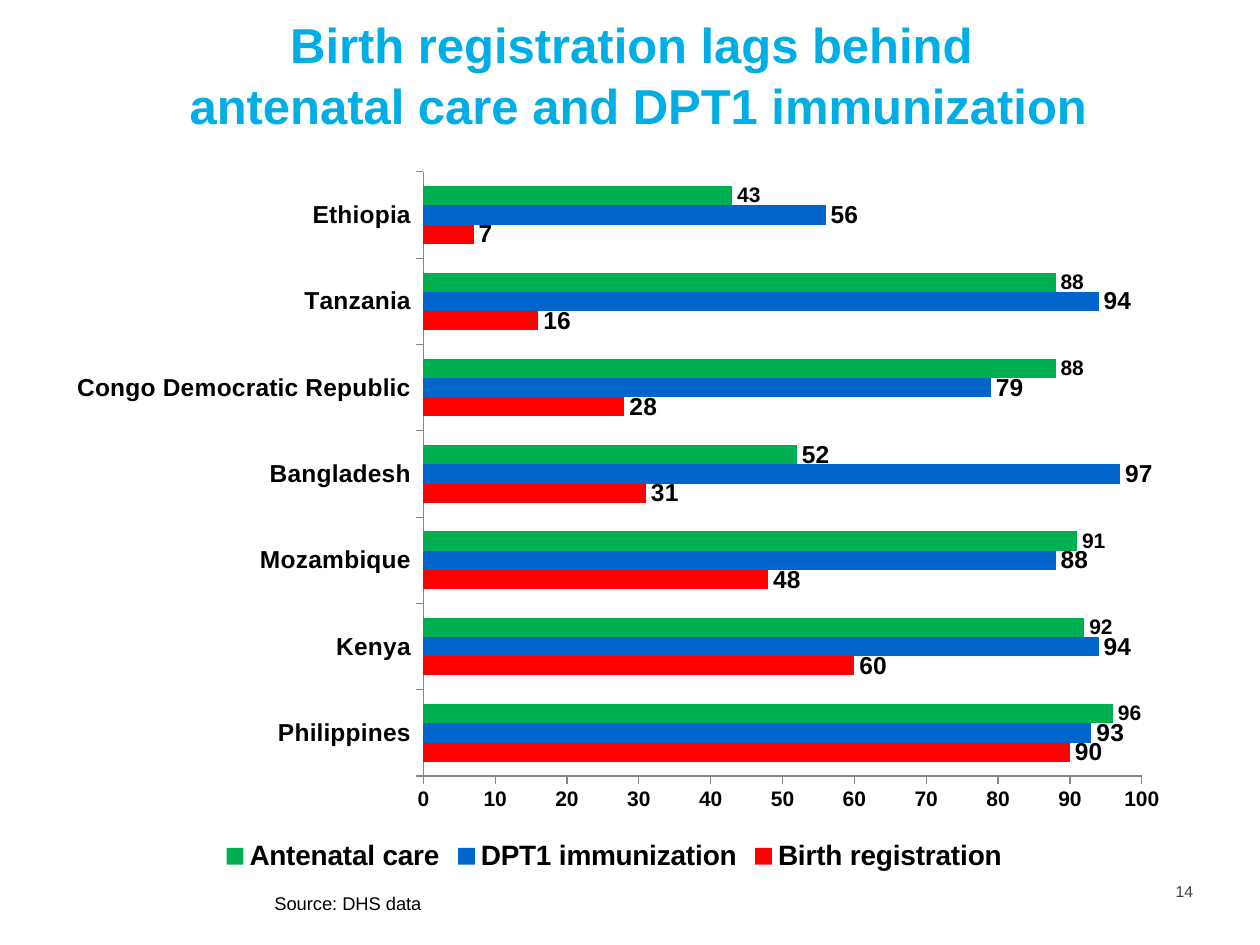
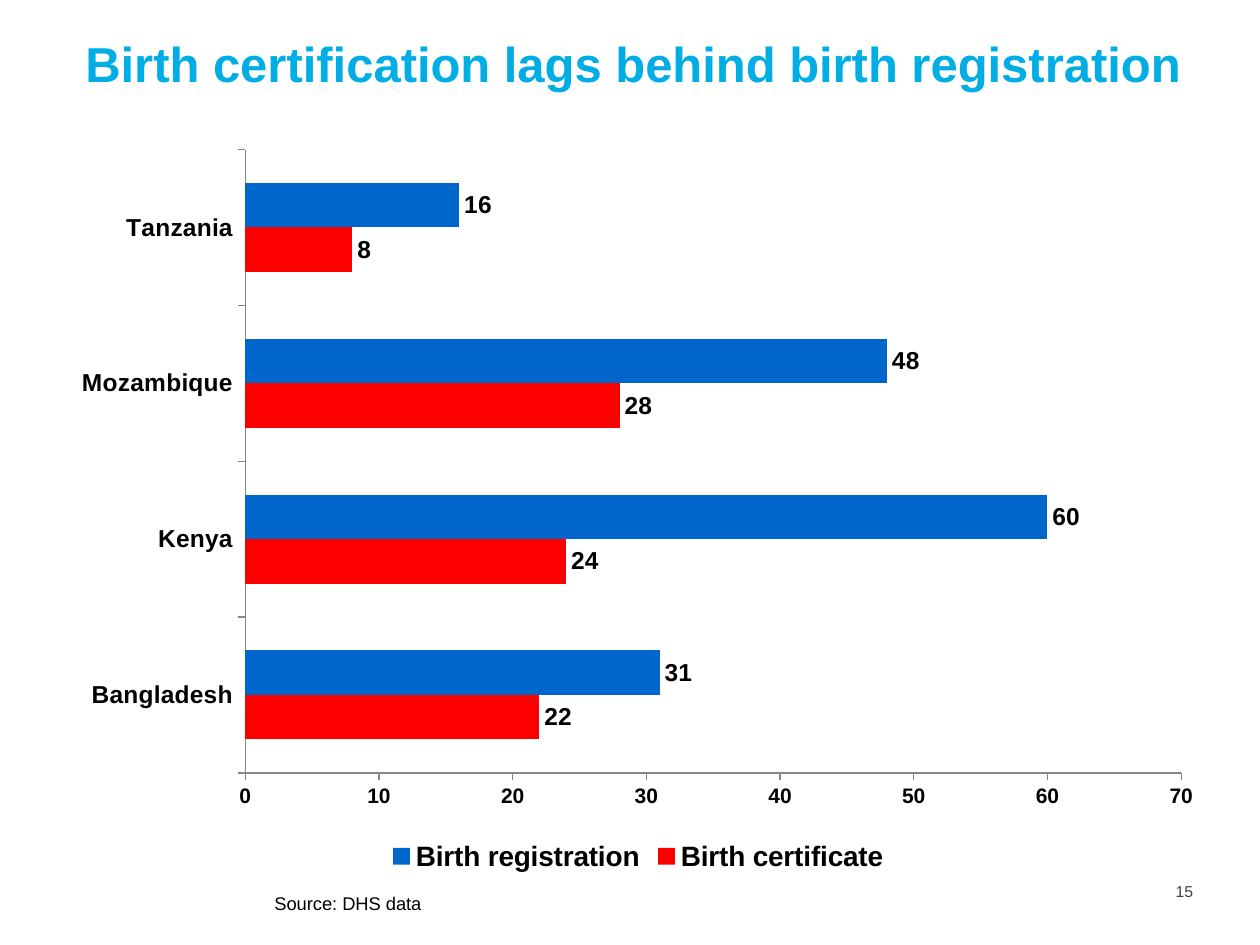
from dataclasses import dataclass

from lxml import etree
from pptx import Presentation
from pptx.chart.data import CategoryChartData
from pptx.dml.color import RGBColor
from pptx.enum.chart import XL_CHART_TYPE, XL_LABEL_POSITION, XL_LEGEND_POSITION, XL_TICK_MARK
from pptx.enum.text import MSO_ANCHOR, PP_ALIGN
from pptx.oxml.ns import qn
from pptx.util import Inches, Pt


@dataclass(frozen=True)
class Theme:
    font: str = "Arial"
    title: str = "00ADE4"
    text: str = "000000"
    number: str = "404040"
    axis: str = "868686"
    red: str = "FF0000"
    blue: str = "0066CC"
    green: str = "00B050"
    title_size: float = 28
    legend_size: float = 16
    label_size: float = 14
    small_label_size: float = 12
    source_size: float = 10.5
    number_size: float = 9


THEME = Theme()
TITLE_ONLY_LAYOUT = 5


def style_font(font, size, color=THEME.text, bold=False):
    font.name = THEME.font
    font.size = Pt(size)
    font.bold = bold
    font.color.rgb = RGBColor.from_string(color)


def place(shape, box):
    shape.left, shape.top, shape.width, shape.height = map(Inches, box)


def set_margins(text_frame, left, top, right, bottom):
    text_frame.margin_left, text_frame.margin_top = Inches(left), Inches(top)
    text_frame.margin_right, text_frame.margin_bottom = Inches(right), Inches(bottom)


# Title, source line and slide number
def add_title(slide, text, box):
    title = slide.shapes.title
    place(title, box)
    text_frame = title.text_frame
    text_frame.text = text
    text_frame.word_wrap = True
    text_frame.vertical_anchor = MSO_ANCHOR.BOTTOM
    set_margins(text_frame, 0, 0, 0, 0.02)
    paragraph = text_frame.paragraphs[0]
    paragraph.alignment = PP_ALIGN.CENTER
    paragraph.line_spacing = 1.05
    for run in paragraph.runs:
        style_font(run.font, THEME.title_size, THEME.title, bold=True)


def add_text(slide, text, box, size, color):
    text_frame = slide.shapes.add_textbox(*map(Inches, box)).text_frame
    text_frame.word_wrap = True
    text_frame.text = text
    style_font(text_frame.paragraphs[0].runs[0].font, size, color)
    return text_frame


def add_footer(slide, number):
    add_text(slide, "Source: DHS data", (2.08, 7.03, 5, 0.28), THEME.source_size, THEME.text)
    number_frame = add_text(slide, str(number), (9.33, 6.96, 0.31, 0.24),
                            THEME.number_size, THEME.number)
    set_margins(number_frame, 0, 0.04, 0, 0)


# Bar chart
def set_plot_area(chart, x, y, width, height):
    """Fix the inner plot area, in fractions of the chart frame."""
    plot_area = chart._chartSpace.chart.plotArea
    for old_layout in plot_area.findall(qn("c:layout")):
        plot_area.remove(old_layout)
    layout = etree.Element(qn("c:layout"))
    manual = etree.SubElement(layout, qn("c:manualLayout"))
    settings = {"layoutTarget": "inner", "xMode": "edge", "yMode": "edge",
                "x": x, "y": y, "w": width, "h": height}
    for name, value in settings.items():
        etree.SubElement(manual, qn(f"c:{name}")).set("val", str(value))
    plot_area.insert(0, layout)


def style_axis(axis, size):
    axis.has_major_gridlines = False
    axis.major_tick_mark = XL_TICK_MARK.OUTSIDE
    axis.minor_tick_mark = XL_TICK_MARK.NONE
    axis.format.line.color.rgb = RGBColor.from_string(THEME.axis)
    axis.format.line.width = Pt(0.75)
    style_font(axis.tick_labels.font, size, bold=True)


def style_series(series, color, label_size):
    series.format.fill.solid()
    series.format.fill.fore_color.rgb = RGBColor.from_string(color)
    labels = series.data_labels
    labels.show_value = True
    labels.number_format = "#,##0"
    labels.number_format_is_linked = False
    labels.position = XL_LABEL_POSITION.OUTSIDE_END
    style_font(labels.font, label_size, bold=True)


def add_bar_chart(slide, box, categories, series_rows, maximum, plot_area):
    data = CategoryChartData()
    data.categories = categories
    for name, values, _, _ in series_rows:
        data.add_series(name, values)
    chart = slide.shapes.add_chart(
        XL_CHART_TYPE.BAR_CLUSTERED, *map(Inches, box), data).chart
    style_font(chart.font, 18)
    chart.has_title = False
    chart.has_legend = True
    chart.legend.position = XL_LEGEND_POSITION.BOTTOM
    chart.legend.include_in_layout = False
    style_font(chart.legend.font, THEME.legend_size, bold=True)

    style_axis(chart.category_axis, THEME.label_size)
    style_axis(chart.value_axis, THEME.small_label_size)
    chart.value_axis.minimum_scale = 0
    chart.value_axis.maximum_scale = maximum
    chart.value_axis.major_unit = 10

    plot = chart.plots[0]
    plot.gap_width = 150
    plot.vary_by_categories = False
    for series, (_, _, color, label_size) in zip(plot.series, series_rows):
        style_series(series, color, label_size)
    set_plot_area(chart, *plot_area)
    return chart


def add_chart_slide(presentation, title, title_box, number):
    slide = presentation.slides.add_slide(presentation.slide_layouts[TITLE_ONLY_LAYOUT])
    add_title(slide, title, title_box)
    add_footer(slide, number)
    return slide


def main():
    presentation = Presentation()
    presentation.slide_width, presentation.slide_height = Inches(10), Inches(7.5)

    # Registration compared with health services
    slide = add_chart_slide(
        presentation,
        "Birth registration lags behind \vantenatal care and DPT1 immunization",
        (0.17, 0.17, 9.79, 0.92), 14)
    countries = ["Philippines", "Kenya", "Mozambique", "Bangladesh",
                 "Congo Democratic Republic", "Tanzania", "Ethiopia"]
    services = [
        ("Birth registration", (90, 60, 48, 31, 28, 16, 7), THEME.red, THEME.label_size),
        ("DPT1 immunization", (93, 94, 88, 97, 79, 94, 56), THEME.blue, THEME.label_size),
        ("Antenatal care", (96, 92, 91, 52, 88, 88, 43), THEME.green, THEME.small_label_size),
    ]
    chart = add_bar_chart(slide, (0.42, 1.25, 8.91, 5.71), countries, services,
                          100, (0.33, 0.02, 0.64, 0.84))
    # The Bangladesh antenatal label is larger than its neighbours
    bangladesh = countries.index("Bangladesh")
    label = chart.plots[0].series[2].points[bangladesh].data_label
    style_font(label.font, THEME.label_size, bold=True)
    label.position = XL_LABEL_POSITION.OUTSIDE_END

    # Certification compared with registration
    slide = add_chart_slide(
        presentation, "Birth certification lags behind birth registration",
        (0.08, 0.08, 9.89, 0.67), 15)
    certification = [
        ("Birth certificate", (22, 24, 28, 8), THEME.red, THEME.label_size),
        ("Birth registration", (31, 60, 48, 16), THEME.blue, THEME.label_size),
    ]
    add_bar_chart(slide, (0.48, 1.07, 9.17, 5.89),
                  ["Bangladesh", "Kenya", "Mozambique", "Tanzania"], certification,
                  70, (0.16, 0.02, 0.81, 0.84))

    presentation.save("out.pptx")


if __name__ == "__main__":
    main()
